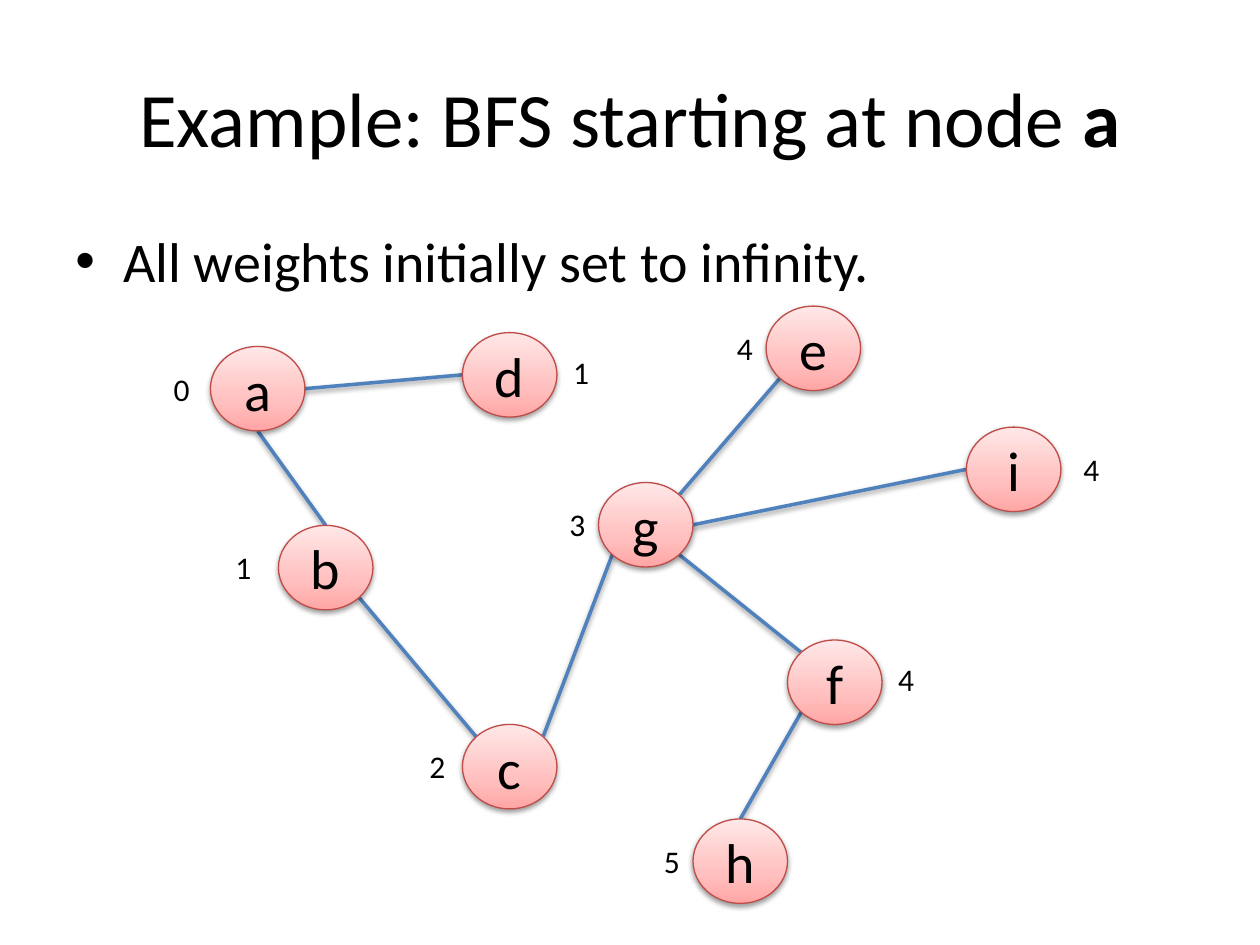
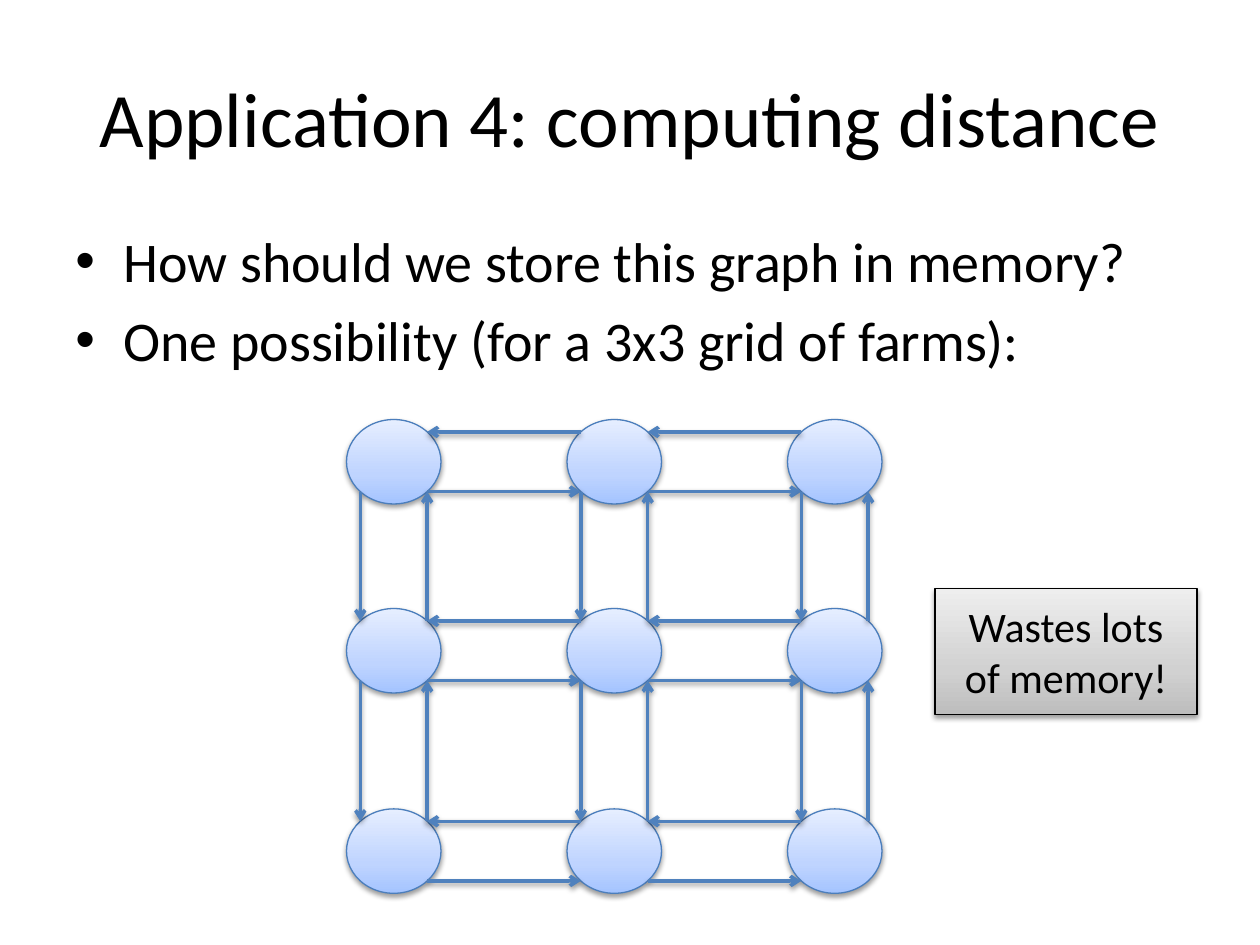
from dataclasses import dataclass
from itertools import product

from lxml.etree import SubElement
from pptx import Presentation
from pptx.dml.color import RGBColor
from pptx.enum.shapes import MSO_CONNECTOR as Connector, MSO_SHAPE as Preset
from pptx.enum.text import MSO_ANCHOR as Anchor, MSO_AUTO_SIZE as AutoSize, PP_ALIGN as Align
from pptx.oxml.ns import qn
from pptx.util import Inches, Pt


@dataclass(frozen=True)
class Tint:
    """Gradient colours from bottom to top, and the outline."""
    bottom: str
    middle: str
    top: str
    line: str


@dataclass(frozen=True)
class Theme:
    font: str = "Calibri"
    text: str = "000000"
    edge: str = "4F81BD"
    blue: Tint = Tint("A4C4FF", "BFD4FF", "E6EEFF", "4B7EBC")
    red: Tint = Tint("FFA6A5", "FFC0BF", "FFE7E7", "BF4C48")
    grey: Tint = Tint("BDBDBD", "D1D1D1", "EEEEEE", "000000")
    title_size: float = 44
    body_size: float = 32
    note_size: float = 24
    label_size: float = 18
    outline: float = 0.75
    edge_width: float = 2


THEME = Theme()
TITLE_ONLY = 5
NODE_WIDTH, NODE_HEIGHT = 0.75, 0.67
DIAGONAL = 0.5 ** 0.5

# Directions from the centre of a node to its rim
RIM = {
    "top": (0, -1), "bottom": (0, 1), "left": (-1, 0), "right": (1, 0),
    "top left": (-DIAGONAL, -DIAGONAL), "top right": (DIAGONAL, -DIAGONAL),
    "bottom left": (-DIAGONAL, DIAGONAL), "bottom right": (DIAGONAL, DIAGONAL),
}


@dataclass(frozen=True)
class Node:
    left: float
    top: float
    name: str = ""
    distance: str = ""
    label_left: float = 0
    label_top: float = 0

    def rim(self, side: str) -> tuple[float, float]:
        across, down = RIM[side]
        return (self.left + NODE_WIDTH / 2 * (1 + across),
                self.top + NODE_HEIGHT / 2 * (1 + down))


@dataclass(frozen=True)
class Edge:
    start: Node
    start_side: str
    end: Node
    end_side: str


TREE = {node.name: node for node in (
    Node(1.67, 2.75, "a", "0", 1.28, 2.89),
    Node(2.21, 4.17, "b", "1", 1.77, 4.3),
    Node(3.67, 2.64, "d", "1", 4.45, 2.75),
    Node(3.67, 5.75, "c", "2", 3.31, 5.88),
    Node(4.75, 3.83, "g", "3", 4.42, 3.96),
    Node(6.08, 2.43, "e", "4", 5.75, 2.56),
    Node(6.25, 5.08, "f", "4", 7.03, 5.19),
    Node(7.67, 3.39, "i", "4", 8.5, 3.52),
    Node(5.5, 6.5, "h", "5", 5.17, 6.63),
)}
TREE_EDGES = [Edge(TREE[start], start_side, TREE[end], end_side)
              for start, start_side, end, end_side in (
    ("a", "bottom", "b", "top"),
    ("a", "right", "d", "left"),
    ("b", "bottom right", "c", "top left"),
    ("c", "top right", "g", "bottom left"),
    ("g", "top right", "e", "bottom left"),
    ("g", "bottom right", "f", "top left"),
    ("g", "right", "i", "left"),
    ("f", "bottom left", "h", "top"),
)]
FARM_COLUMNS = [2.75 + 1.75 * column for column in range(3)]
FARM_ROWS = [3.33, 4.83, 6.42]


def add_run(paragraph, text: str, size: float, bold: bool = False) -> None:
    run = paragraph.add_run()
    run.text = text
    run.font.name = THEME.font
    run.font.size = Pt(size)
    run.font.bold = bold
    run.font.color.rgb = RGBColor.from_string(THEME.text)


def add_shadow(properties) -> None:
    """Give a shape or connector the soft shadow that falls straight down."""
    effects = SubElement(properties, qn("a:effectLst"))
    shadow = SubElement(effects, qn("a:outerShdw"), blurRad=str(Pt(3.1)),
                        dist=str(Pt(1.6)), dir="5400000", rotWithShape="0")
    color = SubElement(shadow, qn("a:srgbClr"), val="000000")
    SubElement(color, qn("a:alpha"), val="38000")


def add_tinted_shape(slide, preset, left: float, top: float, width: float, height: float,
                     tint: Tint, text: str, size: float) -> None:
    shape = slide.shapes.add_shape(preset, Inches(left), Inches(top),
                                   Inches(width), Inches(height))
    shape.fill.gradient()
    shape.fill.gradient_angle = 90
    properties = shape._element.spPr
    stops = properties.find(qn("a:gradFill")).find(qn("a:gsLst"))
    for stop in list(stops):
        stops.remove(stop)
    for position, color in ((0, tint.bottom), (35, tint.middle), (100, tint.top)):
        stop = SubElement(stops, qn("a:gs"), pos=str(position * 1000))
        SubElement(stop, qn("a:srgbClr"), val=color)
    shape.line.color.rgb = RGBColor.from_string(tint.line)
    shape.line.width = Pt(THEME.outline)
    add_shadow(properties)
    if text:
        frame = shape.text_frame
        frame.word_wrap = True
        frame.vertical_anchor = Anchor.MIDDLE
        frame.paragraphs[0].alignment = Align.CENTER
        add_run(frame.paragraphs[0], text, size)


def add_node(slide, node: Node, tint: Tint) -> None:
    add_tinted_shape(slide, Preset.OVAL, node.left, node.top, NODE_WIDTH, NODE_HEIGHT,
                     tint, node.name, THEME.body_size)


def add_edge(slide, edge: Edge, arrow: bool = False) -> None:
    start, end = edge.start.rim(edge.start_side), edge.end.rim(edge.end_side)
    connector = slide.shapes.add_connector(
        Connector.STRAIGHT, *(Inches(value) for value in (*start, *end)))
    connector.line.color.rgb = RGBColor.from_string(THEME.edge)
    connector.line.width = Pt(THEME.edge_width)
    properties = connector._element.spPr
    if arrow:
        SubElement(properties.find(qn("a:ln")), qn("a:tailEnd"), type="arrow")
    add_shadow(properties)


def add_distance(slide, node: Node) -> None:
    box = slide.shapes.add_textbox(Inches(node.label_left), Inches(node.label_top),
                                   Inches(0.33), Inches(0.4))
    box.text_frame.word_wrap = False
    box.text_frame.auto_size = AutoSize.SHAPE_TO_FIT_TEXT
    add_run(box.text_frame.paragraphs[0], node.distance, THEME.label_size)


def add_bullets(slide, lines: list[str]) -> None:
    box = slide.shapes.add_textbox(Inches(0.5), Inches(1.75), Inches(9), Inches(4.95))
    frame = box.text_frame
    frame.word_wrap = True
    for index, line in enumerate(lines):
        paragraph = frame.add_paragraph() if index else frame.paragraphs[0]
        paragraph.space_before = Pt(THEME.body_size * 0.2)
        properties = paragraph._p.get_or_add_pPr()
        properties.set("marL", str(Inches(0.38)))
        properties.set("indent", str(-Inches(0.38)))
        SubElement(properties, qn("a:buFont"), typeface="Arial")
        SubElement(properties, qn("a:buChar"), char="•")
        add_run(paragraph, line, THEME.body_size)


def add_titled_slide(presentation, title: str, bullets: list[str], bold_end: str = ""):
    slide = presentation.slides.add_slide(presentation.slide_layouts[TITLE_ONLY])
    shape = slide.shapes.title
    shape.left, shape.top = Inches(0.5), Inches(0.3)
    shape.width, shape.height = Inches(9), Inches(1.25)
    shape.text_frame.vertical_anchor = Anchor.MIDDLE
    paragraph = shape.text_frame.paragraphs[0]
    paragraph.alignment = Align.CENTER
    add_run(paragraph, title, THEME.title_size)
    if bold_end:
        add_run(paragraph, bold_end, THEME.title_size, bold=True)
    add_bullets(slide, bullets)
    return slide


def build_search_slide(presentation) -> None:
    slide = add_titled_slide(presentation, "Example: BFS starting at node ",
                             ["All weights initially set to infinity."], bold_end="a")
    for edge in TREE_EDGES:
        add_edge(slide, edge)
    for node in TREE.values():
        add_node(slide, node, THEME.red)
    for node in TREE.values():
        add_distance(slide, node)


def farm_edges(farms: dict[tuple[int, int], Node]) -> list[Edge]:
    """Link every farm with its right and lower neighbour, both ways."""
    edges = []
    for (row, column), farm in farms.items():
        if east := farms.get((row, column + 1)):
            edges += [Edge(farm, "bottom right", east, "bottom left"),
                      Edge(east, "top left", farm, "top right")]
        if south := farms.get((row + 1, column)):
            edges += [Edge(farm, "bottom left", south, "top left"),
                      Edge(south, "top right", farm, "bottom right")]
    return edges


def build_farm_slide(presentation) -> None:
    slide = add_titled_slide(presentation, "Application 4: computing distance",
                             ["How should we store this graph in memory?",
                              "One possibility (for a 3x3 grid of farms):"])
    farms = {(row, column): Node(FARM_COLUMNS[column], FARM_ROWS[row])
             for row, column in product(range(3), repeat=2)}
    for farm in farms.values():
        add_node(slide, farm, THEME.blue)
    for edge in farm_edges(farms):
        add_edge(slide, edge, arrow=True)
    add_tinted_shape(slide, Preset.RECTANGLE, 7.42, 4.67, 2.08, 1, THEME.grey,
                     "Wastes lots of memory!", THEME.note_size)


def main() -> None:
    presentation = Presentation()
    presentation.slide_width, presentation.slide_height = Inches(10), Inches(7.5)
    build_search_slide(presentation)
    build_farm_slide(presentation)
    presentation.save("out.pptx")


if __name__ == "__main__":
    main()
